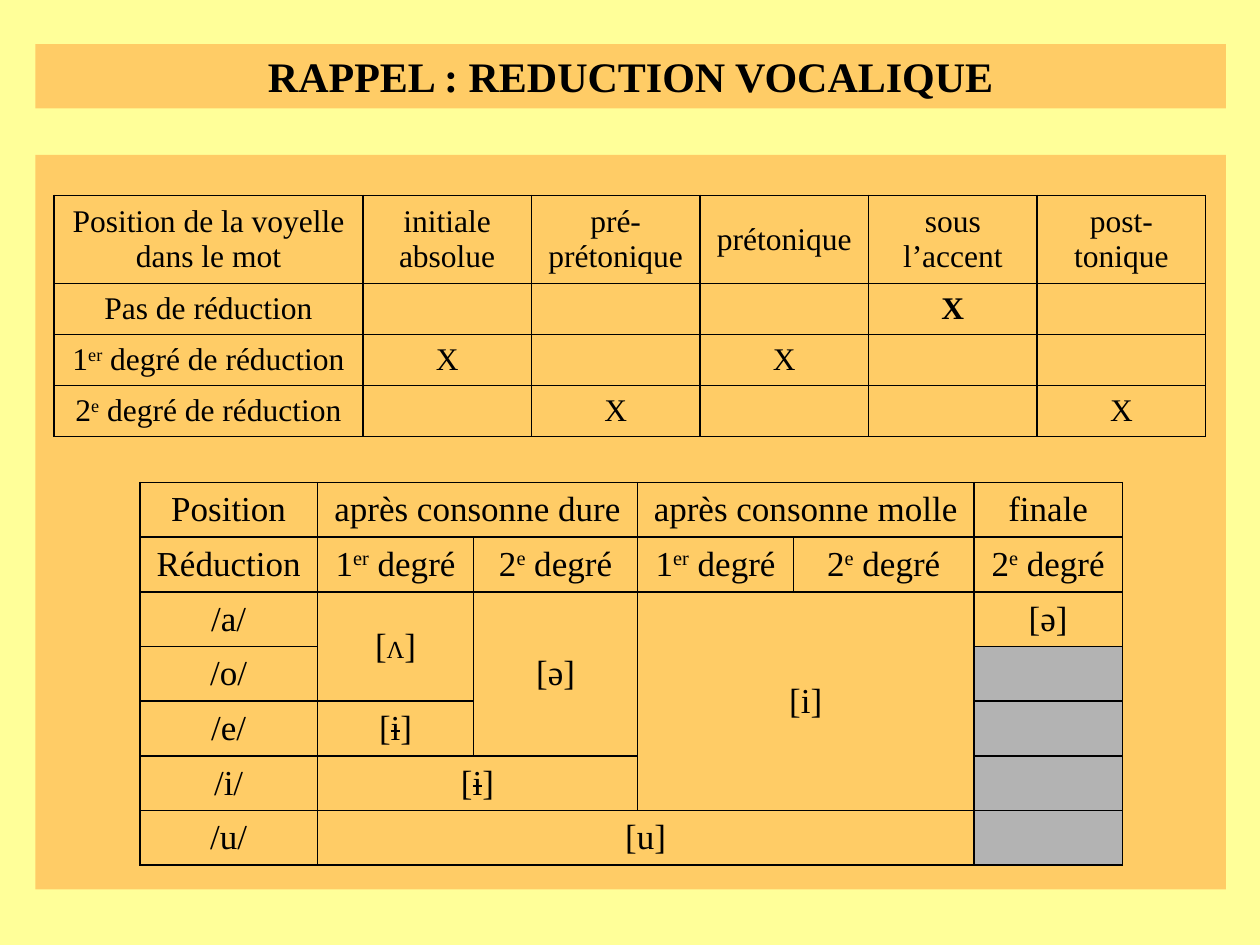
import lxml.etree
import pptx
import pptx.dml.color
import pptx.enum.shapes
import pptx.enum.text
import pptx.oxml.ns
import pptx.util

COLORS = {"page": "FFFF99", "panel": "FFCC66", "ink": "000000", "unused": "B3B3B3"}
FONT = "Times New Roman"
UNITS_PER_INCH = 10  # the slide is a grid of 100 columns by 75 rows


def grid(units):
    return pptx.util.Inches(units / UNITS_PER_INCH)


def rgb(name):
    return pptx.dml.color.RGBColor.from_string(COLORS[name])


class SlideBuilder:
    def __init__(self, presentation):
        self.slide = presentation.slides.add_slide(presentation.slide_layouts[6])
        background = self.slide.background.fill
        background.solid()
        background.fore_color.rgb = rgb("page")

    def panel(self, left, top, width, height):
        shape = self.slide.shapes.add_shape(
            pptx.enum.shapes.MSO_SHAPE.RECTANGLE,
            grid(left), grid(top), grid(width), grid(height))
        shape.shadow.inherit = False
        shape.fill.solid()
        shape.fill.fore_color.rgb = rgb("panel")
        shape.line.fill.background()
        return shape

    def title(self, text, *place):
        frame = self.panel(*place).text_frame
        frame.word_wrap = True
        frame.auto_size = pptx.enum.text.MSO_AUTO_SIZE.SHAPE_TO_FIT_TEXT
        frame.vertical_anchor = pptx.enum.text.MSO_ANCHOR.TOP
        frame.paragraphs[0].space_before = pptx.util.Pt(15)
        self.add_runs(frame.paragraphs[0], [(text, "bold")], 24)

    def add_runs(self, paragraph, runs, size):
        """Add each run, given as plain text or as a (text, style) pair."""
        paragraph.alignment = pptx.enum.text.PP_ALIGN.CENTER
        for item in runs:
            text, style = (item, "") if isinstance(item, str) else item
            run = paragraph.add_run()
            run.text = text
            run.font.name = FONT
            run.font.size = pptx.util.Pt(14 if style == "small" else size)
            run.font.bold = style == "bold"
            run.font.color.rgb = rgb("ink")
            properties = run._r.get_or_add_rPr()
            if style == "super":
                properties.set("baseline", "30000")
            elif style == "strike":
                properties.set("strike", "sngStrike")

    def border(self, cell):
        """Draw the four sides; they must come before the fill in the XML."""
        properties = cell._tc.get_or_add_tcPr()
        qn = pptx.oxml.ns.qn
        for position, side in enumerate(("a:lnL", "a:lnR", "a:lnT", "a:lnB")):
            line = lxml.etree.Element(qn(side), w=str(pptx.util.Pt(1)))
            solid = lxml.etree.SubElement(line, qn("a:solidFill"))
            lxml.etree.SubElement(solid, qn("a:srgbClr"), val=COLORS["ink"])
            properties.insert(position, line)

    def table(self, left, top, columns, rows, size, texts, spans=(), unused=()):
        """texts and spans are keyed by (row, column); a span is (rows, columns)."""
        table = self.slide.shapes.add_table(
            len(rows), len(columns), grid(left), grid(top),
            grid(sum(columns)), grid(sum(rows))).table
        table.first_row = table.horz_banding = False
        for column, width in zip(table.columns, columns):
            column.width = grid(width)
        for row, height in zip(table.rows, rows):
            row.height = grid(height)
        for (row, column), (down, across) in dict(spans).items():
            table.cell(row, column).merge(
                table.cell(row + down - 1, column + across - 1))
        for row in range(len(rows)):
            for column in range(len(columns)):
                cell = table.cell(row, column)
                cell.vertical_anchor = pptx.enum.text.MSO_ANCHOR.MIDDLE
                if (row, column) in unused:
                    cell.fill.solid()
                    cell.fill.fore_color.rgb = rgb("unused")
                else:
                    cell.fill.background()
                self.border(cell)
                if (row, column) in texts:
                    self.add_runs(cell.text_frame.paragraphs[0], texts[row, column], size)


def degree(number, rest=" degré"):
    return [str(number), ("er" if number == 1 else "e", "super"), rest]


def line_of(row, items, first_column=0):
    return {(row, column): runs for column, runs in enumerate(items, first_column)}


def main():
    presentation = pptx.Presentation()
    presentation.slide_width, presentation.slide_height = grid(100), grid(75)
    builder = SlideBuilder(presentation)
    builder.title("RAPPEL : REDUCTION VOCALIQUE", 2.8, 3.5, 94.5, 5.1)
    builder.panel(2.8, 12.3, 94.5, 58.3)

    barred_i = ["[", ("i", "strike"), "]"]
    vowels = {(row, 0): [f"/{vowel}/"] for row, vowel in enumerate("aoeiu", 2)}
    builder.table(
        11.1, 38.3, [14.1, 12.4, 13, 12.4, 14.3, 11.8], [4.33] * 7, 20,
        {(0, 0): ["Position"], (0, 1): ["après consonne dure"],
         (0, 3): ["après consonne molle"], (0, 5): ["finale"],
         (1, 0): ["Réduction"],
         **line_of(1, [degree(number) for number in (1, 2, 1, 2, 2)], 1),
         **vowels,
         (2, 1): ["[", ("Λ", "small"), "]"], (2, 2): ["[ə]"],
         (2, 3): ["[i]"], (2, 5): ["[ə]"],
         (4, 1): barred_i, (5, 1): barred_i, (6, 1): ["[u]"]},
        spans={(0, 1): (1, 2), (0, 3): (1, 2), (2, 1): (2, 1), (2, 2): (3, 1),
               (2, 3): (4, 2), (5, 1): (1, 2), (6, 1): (1, 4)},
        unused=[(row, 5) for row in range(3, 7)])

    headings = ["Position de la voyelle dans le mot", "initiale absolue",
                "pré-prétonique", "prétonique", "sous l’accent", "post-tonique"]
    builder.table(
        4.3, 15.5, [24.5] + [13.38] * 5, [7] + [4.05] * 3, 18,
        {**line_of(0, [[heading] for heading in headings]),
         (1, 0): ["Pas de réduction"], (1, 4): [("X", "bold")],
         (2, 0): degree(1, " degré de réduction"),
         (3, 0): degree(2, " degré de réduction"),
         **{place: ["X"] for place in [(2, 1), (2, 3), (3, 2), (3, 5)]}})

    presentation.save("out.pptx")


if __name__ == "__main__":
    main()
